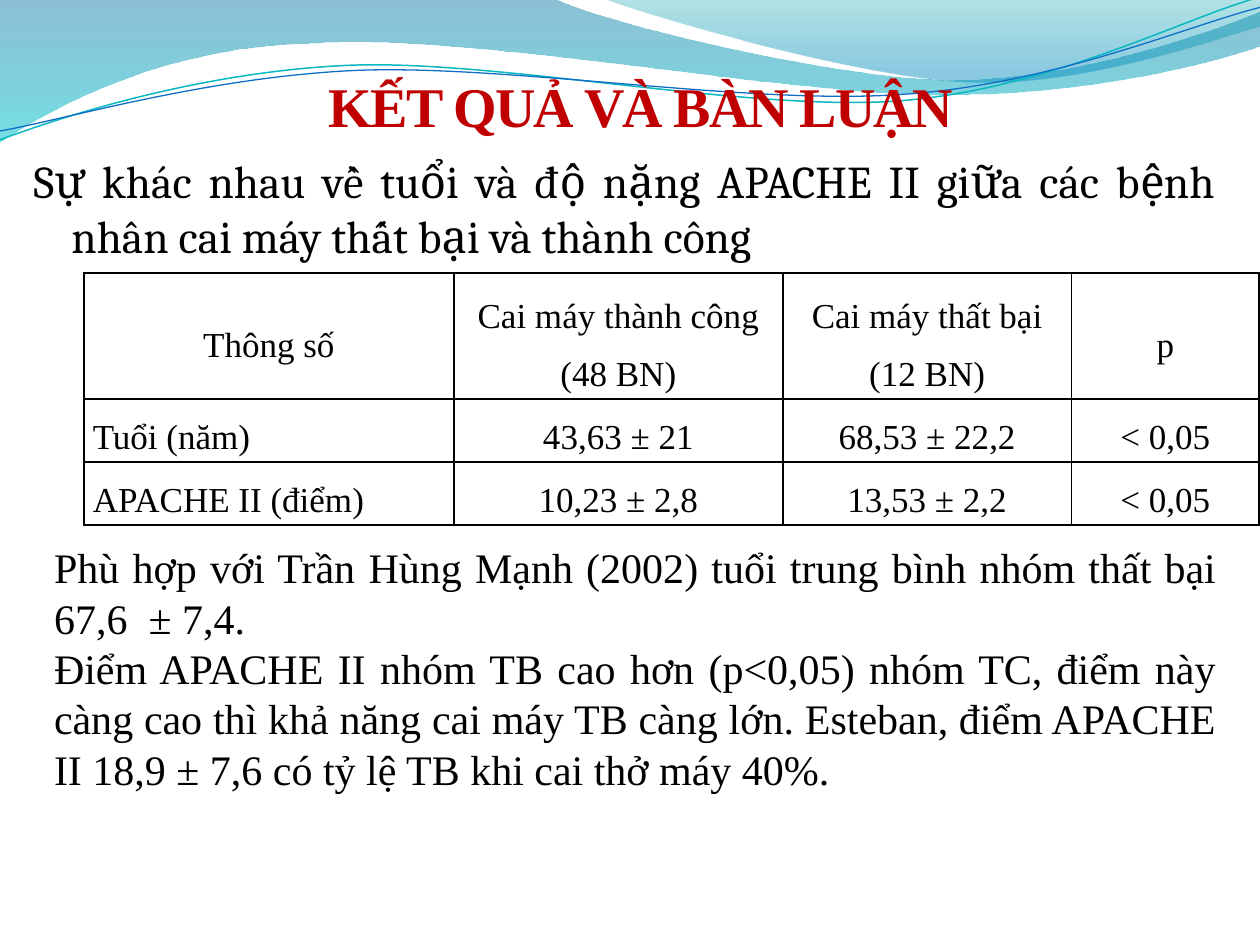
import pptx
import pptx.dml.color
import pptx.enum.text
import pptx.oxml.ns
import pptx.util
from lxml import etree

Cm = pptx.util.Cm
Pt = pptx.util.Pt
ALIGN = pptx.enum.text.PP_ALIGN
ANCHOR = pptx.enum.text.MSO_ANCHOR
SERIF = "Times New Roman"


def color(hex_code):
    return pptx.dml.color.RGBColor.from_string(hex_code)


def add_xml(parent, tag, **attributes):
    return etree.SubElement(parent, pptx.oxml.ns.qn(tag), attributes)


def write(frame, text, size=20, font=SERIF, ink="000000", bold=False, align=ALIGN.CENTER,
          anchor=ANCHOR.TOP, insets=(0.25, 0.13, 0.25, 0.13), before=0, line=None,
          hanging=0, tracking=0):
    """Fill a text frame or a cell's frame; each line of text is one paragraph."""
    frame.word_wrap = True
    frame.vertical_anchor = anchor
    frame.margin_left, frame.margin_top, frame.margin_right, frame.margin_bottom = map(Cm, insets)
    frame.text = text
    for paragraph in frame.paragraphs:
        paragraph.alignment = align
        paragraph.space_before = Pt(before)
        paragraph.line_spacing = line
        if hanging:
            properties = paragraph._p.get_or_add_pPr()
            properties.set("marL", str(Cm(hanging)))
            properties.set("indent", str(-Cm(hanging)))
        for run in paragraph.runs:
            run.font.size, run.font.name, run.font.bold = Pt(size), font, bold
            run.font.color.rgb = color(ink)
            if tracking:
                run._r.get_or_add_rPr().set("spc", str(round(tracking * 100)))


def add_text(slide, box, text, **style):
    frame = slide.shapes.add_textbox(*map(Cm, box)).text_frame
    write(frame, text, **style)
    return frame


def add_outline(shapes, origin, start, segments, close):
    """Draw straight (x, y) and cubic (x1, y1, x2, y2, x, y) segments."""
    points = [start]
    for segment in segments:
        points += zip(segment[::2], segment[1::2])
    corners = [(Cm(origin[0] + x), Cm(origin[1] + y)) for x, y in points]
    builder = shapes.build_freeform(*corners[0])
    builder.add_line_segments(corners[1:], close=close)
    outline = builder.convert_to_shape()
    outline.shadow.inherit = False

    # Merge the three points of each cubic segment into one curve
    lines = iter(list(outline._element.iter(pptx.oxml.ns.qn("a:lnTo"))))
    for segment in segments:
        first = next(lines)
        if len(segment) == 6:
            first.tag = pptx.oxml.ns.qn("a:cubicBezTo")
            for follower in (next(lines), next(lines)):
                first.append(follower[0])
                follower.getparent().remove(follower)
    return outline


def add_wave(shapes, origin, start, segments, stops):
    wave = add_outline(shapes, origin, start, segments, close=True)
    wave.line.fill.background()
    wave.fill.gradient()
    wave.fill.gradient_angle = 270
    for stop, (position, hex_code, opacity) in zip(wave.fill.gradient_stops, stops):
        stop.position = position
        stop.color.rgb = color(hex_code)
    tints = list(wave._element.spPr.iter(pptx.oxml.ns.qn("a:srgbClr")))
    for tint, (position, hex_code, opacity) in zip(tints, stops):
        add_xml(tint, "a:alpha", val=str(opacity * 1000))


def add_strand(shapes, origin, start, segments, hex_code, width):
    strand = add_outline(shapes, origin, start, segments, close=False)
    strand.rotation = 357.3
    strand.fill.background()
    strand.line.color.rgb = color(hex_code)
    strand.line.width = Pt(width)


def add_wave_banner(slide, origin):
    # Translucent waves
    add_wave(slide.shapes, origin, (0, 0), [
        (11.18, -0.03), (12.09, 0.43, 16.87, 1.6, 19.25, 1.6),
        (21.67, 1.6, 24.33, 0.66, 25.4, 0.23), (25.43, 0.91),
        (24.97, 1.12, 22.1, 1.93, 18.95, 1.91), (15.8, 1.91, 9.7, 0.71, 6.53, 0.86),
        (3.28, 0.91, 1.17, 2.11, -0.03, 2.87), (0, 0),
    ], [(0, "0074A1", 45), (1, "00C6CF", 55)])
    add_wave(slide.shapes, origin, (12.17, -0.03), [
        (12.93, 0.28, 17.32, 1.57, 19.53, 1.65),
        (21.74, 1.75, 24.41, 0.81, 25.4, 0.53), (25.4, 0), (12.17, -0.03),
    ], [(0, "00A1A9", 30), (0.8, "008BBF", 45)])
    # Thin strands, tilted together
    strands = slide.shapes.add_group_shape().shapes
    add_strand(strands, origin, (-0.05, 2.22), [
        (1.19, 1.82, 4.02, 1.04, 7.05, 1.05), (10.05, 1.07, 15.02, 2.37, 18.08, 2.29),
        (21.13, 2.2, 23.86, 0.91, 25.41, 0.55),
    ], "0AB8BF", 0.85)
    add_strand(strands, origin, (-0.04, 2.04), [
        (1.16, 1.9, 4.17, 1.15, 7.2, 1.16), (10.25, 1.18, 15.13, 2.25, 18.19, 2.16),
        (21.21, 2.1, 23.93, 1.06, 25.45, 0.75),
    ], "0F6FC6", 0.75)


def add_borders(cell, hex_code="000000", width=1):
    properties = cell._tc.get_or_add_tcPr()
    for index, side in enumerate(("a:lnL", "a:lnR", "a:lnT", "a:lnB")):
        border = etree.Element(pptx.oxml.ns.qn(side), w=str(Pt(width)))
        add_xml(add_xml(border, "a:solidFill"), "a:srgbClr", val=hex_code)
        properties.insert(index, border)


def add_comparison_table(slide, box, widths, heights, records):
    table = slide.shapes.add_table(len(records), len(widths), *map(Cm, box)).table
    table.first_row = table.horz_banding = False
    for column, width in zip(table.columns, widths):
        column.width = Cm(width)
    for row, height in zip(table.rows, heights):
        row.height = Cm(height)
    label_aligns = (ALIGN.CENTER, ALIGN.JUSTIFY, ALIGN.LEFT)
    for r, record in enumerate(records):
        for c, text in enumerate(record):
            cell = table.cell(r, c)
            write(cell.text_frame, text, before=6, line=1.5,
                  align=ALIGN.CENTER if c else label_aligns[r])
            cell.vertical_anchor = ANCHOR.TOP if r else ANCHOR.MIDDLE
            cell.margin_left = cell.margin_right = Cm(0.18)
            cell.margin_top = cell.margin_bottom = 0
            cell.fill.background()
            add_borders(cell)


def main():
    deck = pptx.Presentation()
    deck.slide_width, deck.slide_height = Cm(25.4), Cm(19.05)
    slide = deck.slides.add_slide(deck.slide_layouts[6])

    add_wave_banner(slide, (0, 0))

    # Lead sentence
    add_text(slide, (0.43, 2.96, 24.33, 2.87),
             "Sự khác nhau về tuổi và độ nặng APACHE II giữa các bệnh nhân cai máy "
             "thất bại và thành công",
             size=26, font="Cambria", align=ALIGN.JUSTIFY, before=5.2, hanging=0.76)

    # Comparison of the two groups
    add_comparison_table(slide, (1.69, 5.5, 23.69, 5.08), (7.46, 6.63, 5.82, 3.78),
                         (2.54, 1.27, 1.27), [
        ("Thông số", "Cai máy thành công (48 BN)", "Cai máy thất bại (12 BN)", "p"),
        ("Tuổi (năm)", "43,63 ± 21", "68,53 ± 22,2", "< 0,05"),
        ("APACHE II (điểm)", "10,23 ± 2,8", "13,53 ± 2,2", "< 0,05"),
    ])

    # Discussion
    discussion = add_text(
        slide, (0.84, 10.79, 23.93, 5.38),
        "Phù hợp với Trần Hùng Mạnh (2002) tuổi trung bình nhóm thất bại 67,6  ± 7,4.\n"
        "Điểm APACHE II nhóm TB cao hơn (p<0,05) nhóm TC, điểm này càng cao thì khả năng "
        "cai máy TB càng lớn. Esteban, điểm APACHE II 18,9 ± 7,6 có tỷ lệ TB khi cai "
        "thở máy 40%.",
        size=24, align=ALIGN.JUSTIFY)
    discussion.auto_size = pptx.enum.text.MSO_AUTO_SIZE.SHAPE_TO_FIT_TEXT

    # Title
    add_text(slide, (0.64, 1.27, 24.56, 1.52), "KẾT QUẢ VÀ BÀN LUẬN", size=32, ink="C00000",
             bold=True, anchor=ANCHOR.BOTTOM, insets=(0, 0.13, 0, 0), tracking=-1)

    deck.save("out.pptx")


if __name__ == "__main__":
    main()
